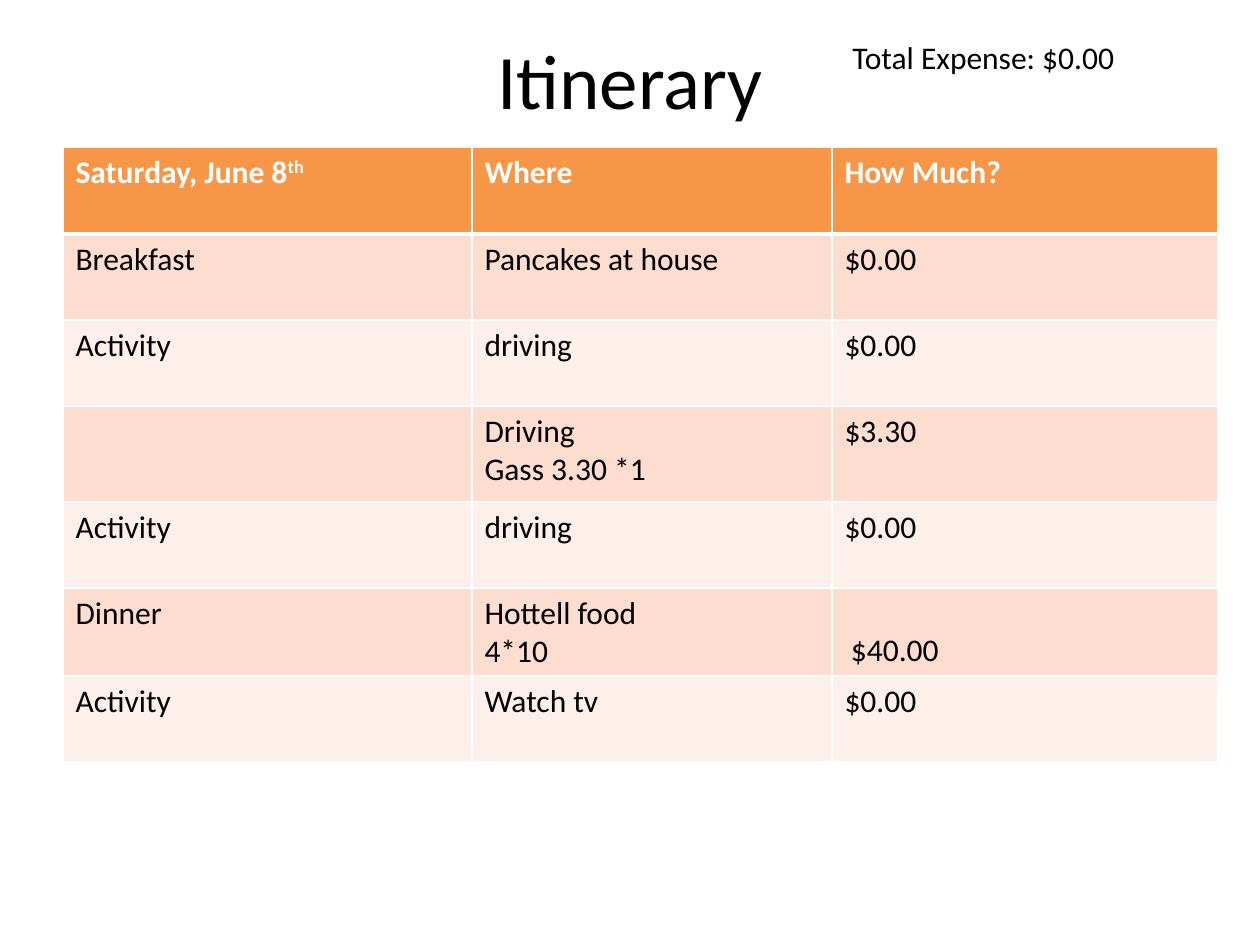
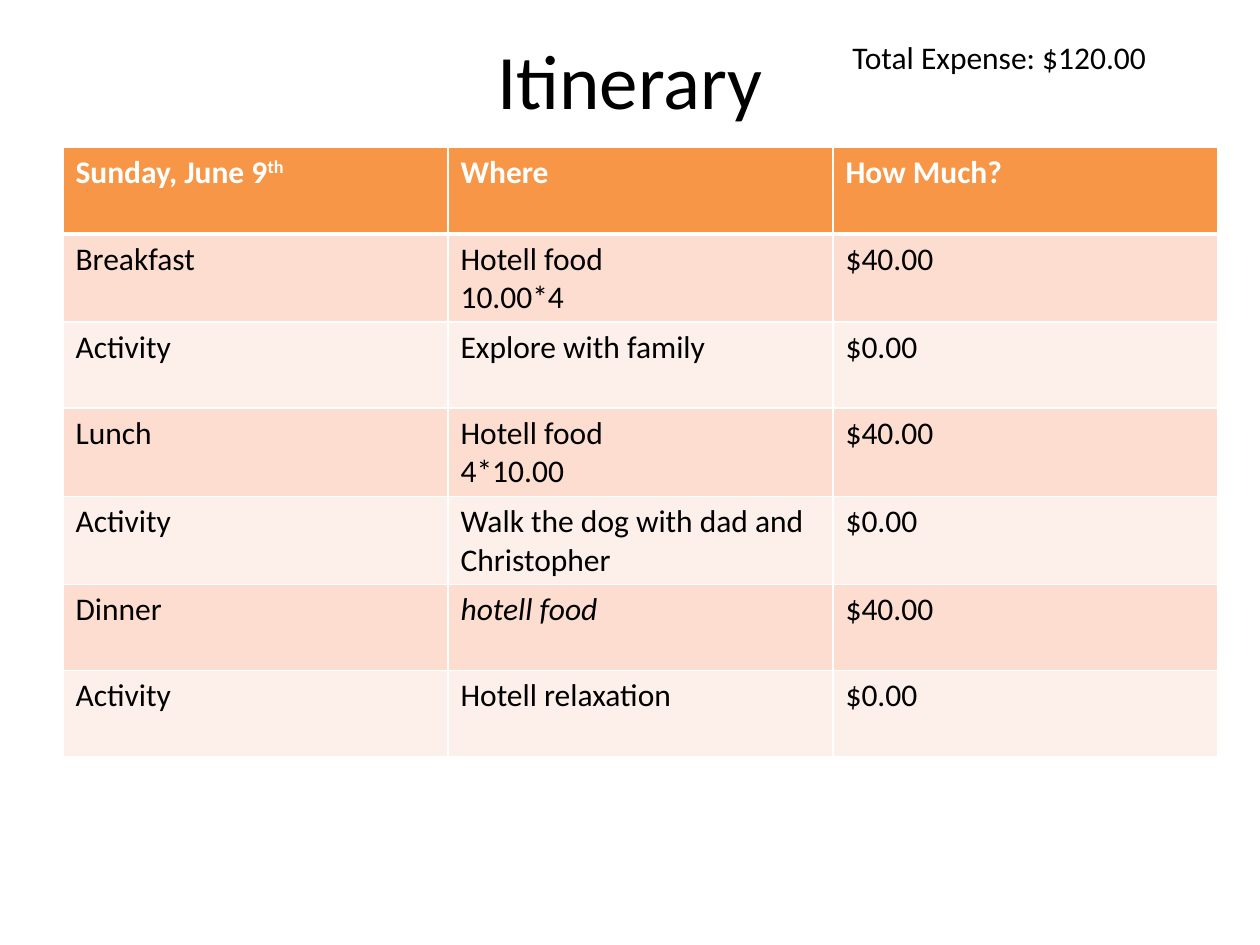
from dataclasses import dataclass

from lxml.etree import SubElement
from pptx import Presentation
from pptx.dml.color import RGBColor
from pptx.enum.text import MSO_ANCHOR, PP_ALIGN
from pptx.oxml.ns import qn
from pptx.util import Emu, Pt

PX_PER_INCH = 126
FONT = "Calibri"
BLACK, WHITE, ORANGE = "000000", "FFFFFF", "F79646"
BANDS = ("FCDDCF", "FDEFE9")
TABLE_LEFT, TABLE_TOP = 63, 147
HEADER_HEIGHT, ROW_HEIGHT = 87, 86


@dataclass
class Span:
    """A stretch of text with its own style."""
    text: str
    italic: bool = False
    raised: bool = False


@dataclass
class LowCell:
    """A cell whose text sits at the bottom, indented."""
    text: str
    indent: int = 19


@dataclass
class Day:
    """One day of the itinerary."""
    date: str
    total: str
    columns: tuple
    rows: list
    tall_rows: dict


DAYS = [
    Day("Saturday, June 8", "$0.00", (409, 360, 386), [
        ("Breakfast", "Pancakes at house", "$0.00"),
        ("Activity", "driving", "$0.00"),
        ("", "Driving\nGass 3.30 *1", "$3.30"),
        ("Activity", "driving", "$0.00"),
        ("Dinner", "Hottell food\n4*10", LowCell("$40.00")),
        ("Activity", "Watch tv", "$0.00"),
    ], {3: 96}),
    Day("Sunday, June 9", "$120.00", (385, 385, 385), [
        ("Breakfast", "Hotell food\n10.00*4", "$40.00"),
        ("Activity", "Explore with family", "$0.00"),
        ("Lunch", "Hotell food\n4*10.00", "$40.00"),
        ("Activity", "Walk the dog with dad and Christopher", "$0.00"),
        ("Dinner", [Span("hotell food", italic=True)], "$40.00"),
        ("Activity", "Hotell relaxation", "$0.00"),
    ], {}),
]


def px(length):
    """Turn pixels into EMU."""
    return Emu(round(length * 914400 / PX_PER_INCH))


def colour(value):
    """Turn a hex string into a colour."""
    return RGBColor.from_string(value)


def add_span(para, span, size, ink, bold=False):
    """Add one styled run to a paragraph."""
    run = para.add_run()
    run.text = span.text
    font = run.font
    font.name, font.size = FONT, Pt(size)
    font.bold, font.italic = bold, span.italic
    font.color.rgb = colour(ink)
    if span.raised:
        run._r.get_or_add_rPr().set("baseline", "30000")


def write(frame, content, size=18, ink=BLACK, bold=False, align=PP_ALIGN.LEFT):
    """Fill a text frame with lines of text or a list of spans."""
    if isinstance(content, str):
        lines = [[Span(line)] for line in content.split("\n")]
    else:
        lines = [content]
    for index, line in enumerate(lines):
        para = frame.add_paragraph() if index else frame.paragraphs[0]
        para.alignment = align
        for span in line:
            if span.text:
                add_span(para, span, size, ink, bold)


def add_text(page, place, content, anchor=MSO_ANCHOR.TOP, **style):
    """Add a wrapped text box."""
    frame = page.shapes.add_textbox(*map(px, place)).text_frame
    frame.word_wrap = True
    frame.vertical_anchor = anchor
    write(frame, content, **style)


def add_borders(cell, top, bottom):
    """Draw white borders, with top and bottom widths in points."""
    properties = cell._tc.get_or_add_tcPr()
    for side, width in (("L", 1), ("R", 1), ("T", top), ("B", bottom)):
        line = SubElement(properties, qn(f"a:ln{side}"), w=str(Pt(width)))
        fill = SubElement(line, qn("a:solidFill"))
        SubElement(fill, qn("a:srgbClr"), val=WHITE)


def fill_cell(cell, content, row):
    """Style and write one table cell."""
    header = row == 0
    add_borders(cell, top=3 if row == 1 else 1, bottom=3 if header else 1)
    cell.fill.solid()
    cell.fill.fore_color.rgb = colour(ORANGE if header else BANDS[(row - 1) % 2])
    if isinstance(content, LowCell):
        cell.vertical_anchor = MSO_ANCHOR.BOTTOM
        cell.margin_left = px(content.indent)
        content = content.text
    write(cell.text_frame, content, ink=WHITE if header else BLACK, bold=header)


def add_itinerary(page, day):
    """Add the table of meals and activities."""
    header = ([Span(day.date), Span("th", raised=True)], "Where", "How Much?")
    rows = [header, *day.rows]
    heights = [HEADER_HEIGHT] + [ROW_HEIGHT] * len(day.rows)
    for row, height in day.tall_rows.items():
        heights[row] = height
    place = TABLE_LEFT, TABLE_TOP, sum(day.columns), sum(heights)
    table = page.shapes.add_table(len(rows), len(header), *map(px, place)).table
    table.horz_banding = False
    for column, width in zip(table.columns, day.columns):
        column.width = px(width)
    for row, (contents, height) in enumerate(zip(rows, heights)):
        table.rows[row].height = px(height)
        for column, content in enumerate(contents):
            fill_cell(table.cell(row, column), content, row)


def add_day(deck, day):
    """Add the slide of one day."""
    page = deck.slides.add_slide(deck.slide_layouts[6])
    add_text(page, (63, 0, 1134, 158), "Itinerary", anchor=MSO_ANCHOR.MIDDLE,
             size=44, align=PP_ALIGN.CENTER)
    add_text(page, (840, 32, 388, 50), f"Total Expense: {day.total}")
    add_itinerary(page, day)


def main():
    """Build and save the deck."""
    deck = Presentation()
    deck.slide_width, deck.slide_height = px(1260), px(945)
    for day in DAYS:
        add_day(deck, day)
    deck.save("out.pptx")


if __name__ == "__main__":
    main()
